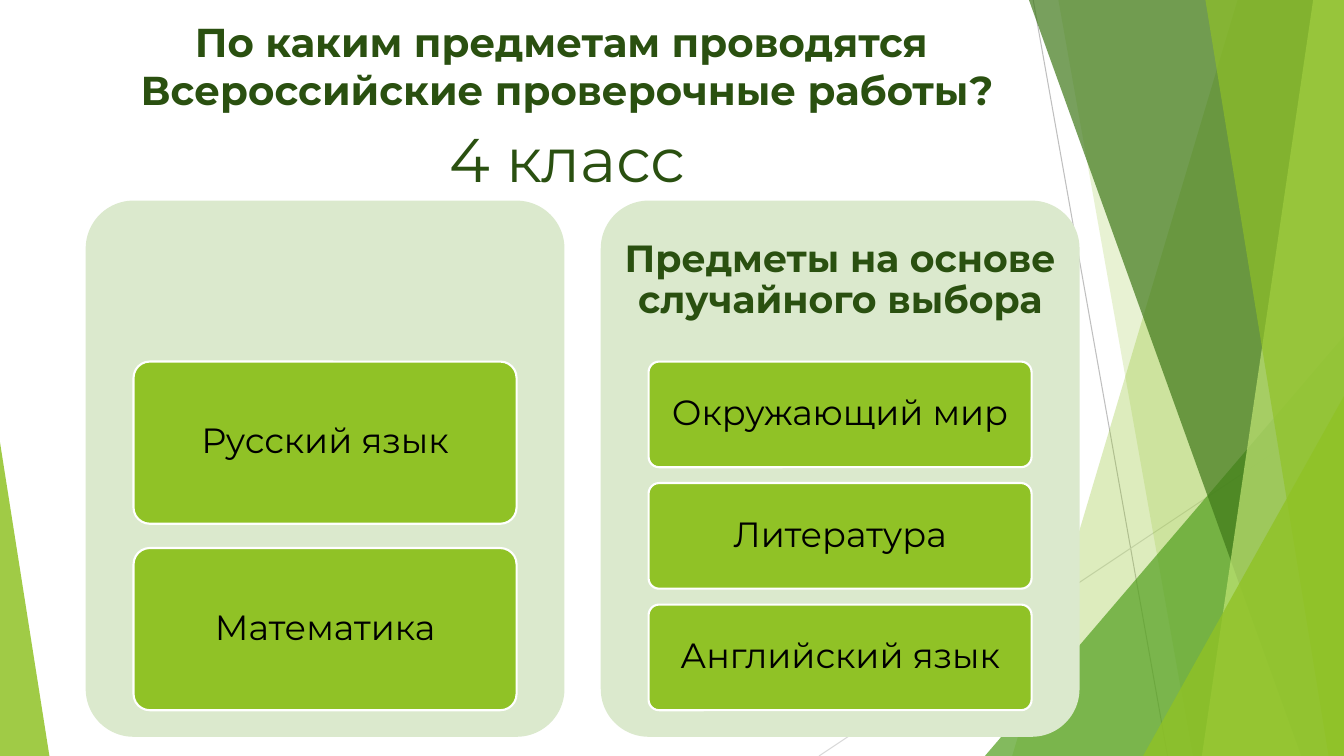
from lxml.etree import SubElement
from pptx import Presentation
from pptx.dml.color import RGBColor
from pptx.enum.shapes import MSO_CONNECTOR, MSO_SHAPE
from pptx.enum.text import MSO_ANCHOR, PP_ALIGN
from pptx.oxml.ns import qn
from pptx.util import Pt

FONT = "Montserrat"
LIME, DARK, PALE = "90C226", "2A5010", "DBE9CD"
WIDTH, HEIGHT = 960, 540

# Panel and card geometry
PANEL_TOP, PANEL_WIDTH, PANEL_HEIGHT = 143.3, 342, 383
CARD_INDENT, CARD_WIDTH = 34.2, 273.6
CARDS_TOP, CARDS_HEIGHT = 258.3, 249
GAP_SHARE = 0.15  # gap between cards as a share of card height


def color(value):
    return RGBColor.from_string(value)


def style_shape(shape, fill, alpha=100, outline=None):
    shape.shadow.inherit = False
    shape.fill.solid()
    shape.fill.fore_color.rgb = color(fill)
    if alpha < 100:
        rgb = shape._element.spPr.find(qn("a:solidFill")).find(qn("a:srgbClr"))
        SubElement(rgb, qn("a:alpha"), val=str(alpha * 1000))
    if outline:
        shape.line.color.rgb = color(outline)
        shape.line.width = Pt(1.5)
    else:
        shape.line.fill.background()


def add_line(slide, start, end, line_color):
    line = slide.shapes.add_connector(
        MSO_CONNECTOR.STRAIGHT, *map(Pt, start + end))
    line.line.color.rgb = color(line_color)
    line.line.width = Pt(0.75)
    SubElement(line._element.spPr, qn("a:effectLst"))


def add_band(slide, top_x, bottom_x, fill, alpha):
    """Area from a slanted left edge to the right side of the slide."""
    builder = slide.shapes.build_freeform(Pt(top_x), 0)
    corners = [(WIDTH, 0), (WIDTH, HEIGHT), (bottom_x, HEIGHT)]
    builder.add_line_segments([(Pt(x), Pt(y)) for x, y in corners], close=True)
    style_shape(builder.convert_to_shape(), fill, alpha)


def add_preset(slide, kind, box, adjustment, fill, alpha=100, outline=None):
    shape = slide.shapes.add_shape(kind, *map(Pt, box))
    shape.adjustments[0] = adjustment
    style_shape(shape, fill, alpha, outline)
    return shape


def add_triangle(slide, left, top, width, apex, fill, alpha):
    box = (left, top, width, HEIGHT - top)
    add_preset(slide, MSO_SHAPE.ISOSCELES_TRIANGLE, box, apex, fill, alpha)


def write_text(shape, text, size, text_color, bold=False, spacing=None,
               anchor=MSO_ANCHOR.MIDDLE, insets=(7.2, 3.6)):
    frame = shape.text_frame
    frame.text = text
    frame.word_wrap = True
    frame.vertical_anchor = anchor
    frame.margin_left = frame.margin_right = Pt(insets[0])
    frame.margin_top = frame.margin_bottom = Pt(insets[1])
    paragraph = frame.paragraphs[0]
    paragraph.alignment = PP_ALIGN.CENTER
    paragraph.line_spacing = spacing
    for run in paragraph.runs:
        run.font.name = FONT
        run.font.size = Pt(size)
        run.font.bold = bold
        run.font.color.rgb = color(text_color)


def add_text(slide, box, *args, **kwargs):
    write_text(slide.shapes.add_textbox(*map(Pt, box)), *args, **kwargs)


def add_panel(slide, left, heading, subjects):
    rounded = MSO_SHAPE.ROUNDED_RECTANGLE
    add_preset(slide, rounded, (left, PANEL_TOP, PANEL_WIDTH, PANEL_HEIGHT),
               0.1, PALE)
    if heading:
        box = (left, PANEL_TOP, PANEL_WIDTH, CARDS_TOP - PANEL_TOP)
        add_text(slide, box, heading, 27, DARK, bold=True, spacing=0.9,
                 insets=(8, 8))
    count = len(subjects)
    height = CARDS_HEIGHT / (count + GAP_SHARE * (count - 1))
    for index, subject in enumerate(subjects):
        top = CARDS_TOP + index * height * (1 + GAP_SHARE)
        card = add_preset(slide, rounded,
                          (left + CARD_INDENT, top, CARD_WIDTH, height),
                          0.1, LIME, outline="FFFFFF")
        write_text(card, subject, 25, "000000", spacing=0.9, insets=(5, 3.6))


def add_backdrop(slide):
    add_line(slide, (738, 0), (834, HEIGHT), "BFBFBF")
    add_line(slide, (WIDTH, 290), (585, HEIGHT), "D9D9D9")
    add_band(slide, 884, 723, LIME, 30)
    add_band(slide, 756, 852, LIME, 20)
    add_triangle(slide, 703.5, 240, 256.5, 1, "54A021", 72)
    add_band(slide, 735, 929.5, "3F7819", 70)
    add_band(slide, 938, 858.5, "C0E474", 70)
    add_band(slide, 861, 949, LIME, 65)
    add_triangle(slide, 816.5, 283, 143.5, 1, LIME, 80)
    add_triangle(slide, 0, 316, 35.3, 0, LIME, 85)


def add_title(slide, text):
    title = slide.shapes.title
    title.left, title.top, title.width, title.height = map(
        Pt, (38.2, 8.6, 733.7, 73.4))
    write_text(title, text, 28.8, DARK, bold=True, spacing=1.0,
               anchor=MSO_ANCHOR.TOP)
    # Keep the title in front of the backdrop
    slide.shapes._spTree.append(title._element)


def main():
    presentation = Presentation()
    presentation.slide_width, presentation.slide_height = Pt(WIDTH), Pt(HEIGHT)
    slide = presentation.slides.add_slide(presentation.slide_layouts[5])

    # Decorative background
    add_backdrop(slide)

    # Title and class
    add_title(slide, "По каким предметам проводятся \v"
                     "Всероссийские проверочные работы?")

    # Subject panels
    add_panel(slide, 61.2, None, ["Русский язык", "Математика"])
    add_panel(slide, 429.1, "Предметы на основе случайного выбора",
              ["Окружающий мир", "Литература", "Английский язык"])
    add_text(slide, (241.2, 82.8, 328.3, 60.5), "4 класс", 44, DARK,
             anchor=MSO_ANCHOR.TOP)

    presentation.save("out.pptx")


if __name__ == "__main__":
    main()
